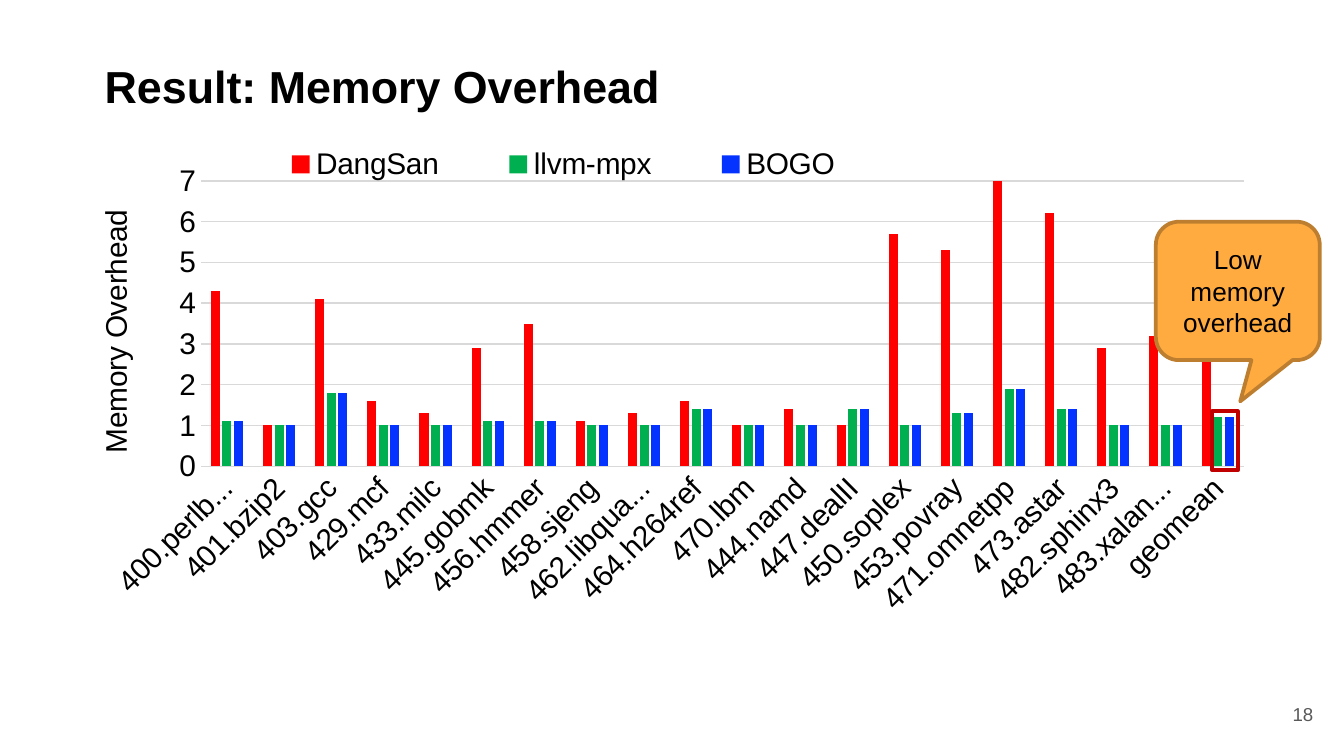
from dataclasses import dataclass

from lxml import etree
from pptx import Presentation
from pptx.chart.data import CategoryChartData
from pptx.dml.color import RGBColor
from pptx.enum.chart import XL_CHART_TYPE, XL_LEGEND_POSITION, XL_TICK_MARK
from pptx.enum.shapes import MSO_SHAPE
from pptx.enum.text import MSO_ANCHOR, PP_ALIGN
from pptx.oxml.ns import qn
from pptx.util import Inches, Pt

COLUMNS = XL_CHART_TYPE.COLUMN_CLUSTERED
BOTTOM = XL_LEGEND_POSITION.BOTTOM
NO_TICK = XL_TICK_MARK.NONE
RECT = MSO_SHAPE.RECTANGLE
CALLOUT = MSO_SHAPE.ROUNDED_RECTANGULAR_CALLOUT
MIDDLE = MSO_ANCHOR.MIDDLE
LEFT, CENTER, RIGHT = PP_ALIGN.LEFT, PP_ALIGN.CENTER, PP_ALIGN.RIGHT


@dataclass(frozen=True)
class Theme:
    font: str = "Arial"
    text: str = "000000"
    muted: str = "595959"
    paper: str = "FFFFFF"
    grid: str = "D9D9D9"
    mark: str = "C00000"
    note: str = "FFAB40"
    note_edge: str = "BD7F2F"
    series: tuple = ("FF0000", "00B050", "0432FF")
    title_size: int = 24
    chart_size: int = 16
    note_size: int = 14
    number_size: int = 10


THEME = Theme()

BENCHMARKS = [
    "400.perlbench", "401.bzip2", "403.gcc", "429.mcf", "433.milc",
    "445.gobmk", "456.hmmer", "458.sjeng", "462.libquantum", "464.h264ref",
    "470.lbm", "444.namd", "447.dealII", "450.soplex", "453.povray",
    "471.omnetpp", "473.astar", "482.sphinx3", "483.xalancbmk", "geomean",
]
# llvm-mpx and BOGO agree to one decimal
MPX = [1.1, 1, 1.8, 1, 1, 1.1, 1.1, 1, 1, 1.4,
       1, 1, 1.4, 1, 1.3, 1.9, 1.4, 1, 1, 1.2]
OVERHEAD = {
    "DangSan": [4.3, 1, 4.1, 1.6, 1.3, 2.9, 3.5, 1.1, 1.3, 1.6,
                1, 1.4, 1, 5.7, 5.3, 186.6, 6.2, 2.9, 3.2, 2.8],
    "llvm-mpx": MPX,
    "BOGO": MPX,
}


def rgb(value):
    return RGBColor.from_string(value)


def style_font(font, size, color=THEME.text, bold=False):
    font.name, font.size, font.bold = THEME.font, Pt(size), bold
    font.color.rgb = rgb(color)


def set_line(line, color, width):
    line.color.rgb = rgb(color)
    line.width = Pt(width)


def write(tf, text, size, color=THEME.text, align=LEFT, bold=False):
    p = tf.paragraphs[0]
    p.alignment = align
    r = p.add_run()
    r.text = text
    style_font(r.font, size, color, bold)


def place(parent, after, **values):
    """Give a chart part a manual layout, in fractions of the chart."""
    for old in parent.findall(qn("c:layout")):
        parent.remove(old)
    layout = etree.Element(qn("c:layout"))
    manual = etree.SubElement(layout, qn("c:manualLayout"))
    for tag, value in values.items():
        etree.SubElement(manual, qn(f"c:{tag}")).set("val", str(value))
    if after is None:
        parent.insert(0, layout)
    else:
        parent.find(qn(after)).addnext(layout)


def add_title(slide, x, y, w, h):
    tf = slide.shapes.add_textbox(x, y, w, h).text_frame
    tf.word_wrap = False
    write(tf, "Result: Memory Overhead", THEME.title_size, bold=True)


def add_overhead_chart(slide, x, y, w, h):
    data = CategoryChartData()
    data.categories = BENCHMARKS
    for name, values in OVERHEAD.items():
        data.add_series(name, values)
    chart = slide.shapes.add_chart(COLUMNS, x, y, w, h, data).chart
    chart.has_title = False
    style_font(chart.font, THEME.chart_size)

    # Columns
    plot = chart.plots[0]
    plot.gap_width, plot.overlap = 219, -27
    plot.vary_by_categories = False
    for series, color in zip(plot.series, THEME.series):
        series.format.fill.solid()
        series.format.fill.fore_color.rgb = rgb(color)
        series.invert_if_negative = False

    # Axes
    cat, val = chart.category_axis, chart.value_axis
    for axis in (cat, val):
        axis.major_tick_mark = axis.minor_tick_mark = NO_TICK
        style_font(axis.tick_labels.font, THEME.chart_size)
    set_line(cat.format.line, THEME.grid, 0.75)
    cat._element.find(qn("c:txPr")).find(qn("a:bodyPr")).set("rot", "-2700000")
    val.minimum_scale, val.maximum_scale, val.major_unit = 0, 7, 1
    val.format.line.fill.background()
    val.has_major_gridlines = True
    set_line(val.major_gridlines.format.line, THEME.grid, 0.75)
    write(val.axis_title.text_frame, "Memory Overhead", THEME.chart_size)

    # Legend above the plot
    chart.has_legend = True
    legend = chart.legend
    legend.position = BOTTOM
    legend.include_in_layout = False
    style_font(legend.font, THEME.chart_size)

    # Places of the parts
    area = chart._chartSpace.chart.plotArea
    place(area, None, layoutTarget="inner", xMode="edge", yMode="edge",
          x=0.094, y=0.093, w=0.895, h=0.571)
    place(legend._element, "c:legendPos", xMode="edge", yMode="edge",
          x=0.12, y=0.01, w=0.57, h=0.1)
    place(val.axis_title._element, "c:tx", xMode="edge", yMode="edge",
          x=0, y=0.14)


def add_highlight(slide, x, y, w, h):
    sp = slide.shapes.add_shape(RECT, x, y, w, h)
    sp.shadow.inherit = False
    sp.fill.background()
    set_line(sp.line, THEME.mark, 2)


def add_callout(slide, x, y, w, h):
    sp = slide.shapes.add_shape(CALLOUT, x, y, w, h)
    sp.shadow.inherit = False
    sp.adjustments[0], sp.adjustments[1] = 0.015, 0.798
    sp.fill.solid()
    sp.fill.fore_color.rgb = rgb(THEME.note)
    set_line(sp.line, THEME.note_edge, 2)
    tf = sp.text_frame
    tf.word_wrap = True
    tf.vertical_anchor = MIDDLE
    write(tf, "Low memory overhead", THEME.note_size, align=CENTER)


def add_page_number(slide, x, y, w, h):
    tf = slide.shapes.add_textbox(x, y, w, h).text_frame
    tf.word_wrap = True
    tf.vertical_anchor = MIDDLE
    tf.margin_left = tf.margin_right = Inches(0.1)
    tf.margin_top = tf.margin_bottom = Inches(0.1)
    write(tf, "18", THEME.number_size, THEME.muted, RIGHT)


def main():
    prs = Presentation()
    prs.slide_width = Inches(10)
    prs.slide_height = prs.slide_width * 9 // 16
    slide = prs.slides.add_slide(prs.slide_layouts[6])
    slide.background.fill.solid()
    slide.background.fill.fore_color.rgb = rgb(THEME.paper)

    regions = (
        (add_overhead_chart, (0.68, 1, 8.67, 3.72)),
        (add_title, (0.68, 0.39, 4.37, 0.5)),
        (add_page_number, (9.27, 5.1, 0.6, 0.43)),
        (add_highlight, (9.02, 3.06, 0.19, 0.44)),
        (add_callout, (8.6, 1.65, 1.22, 1.03)),
    )
    for add_region, box in regions:
        add_region(slide, *map(Inches, box))
    prs.save("out.pptx")


if __name__ == "__main__":
    main()
